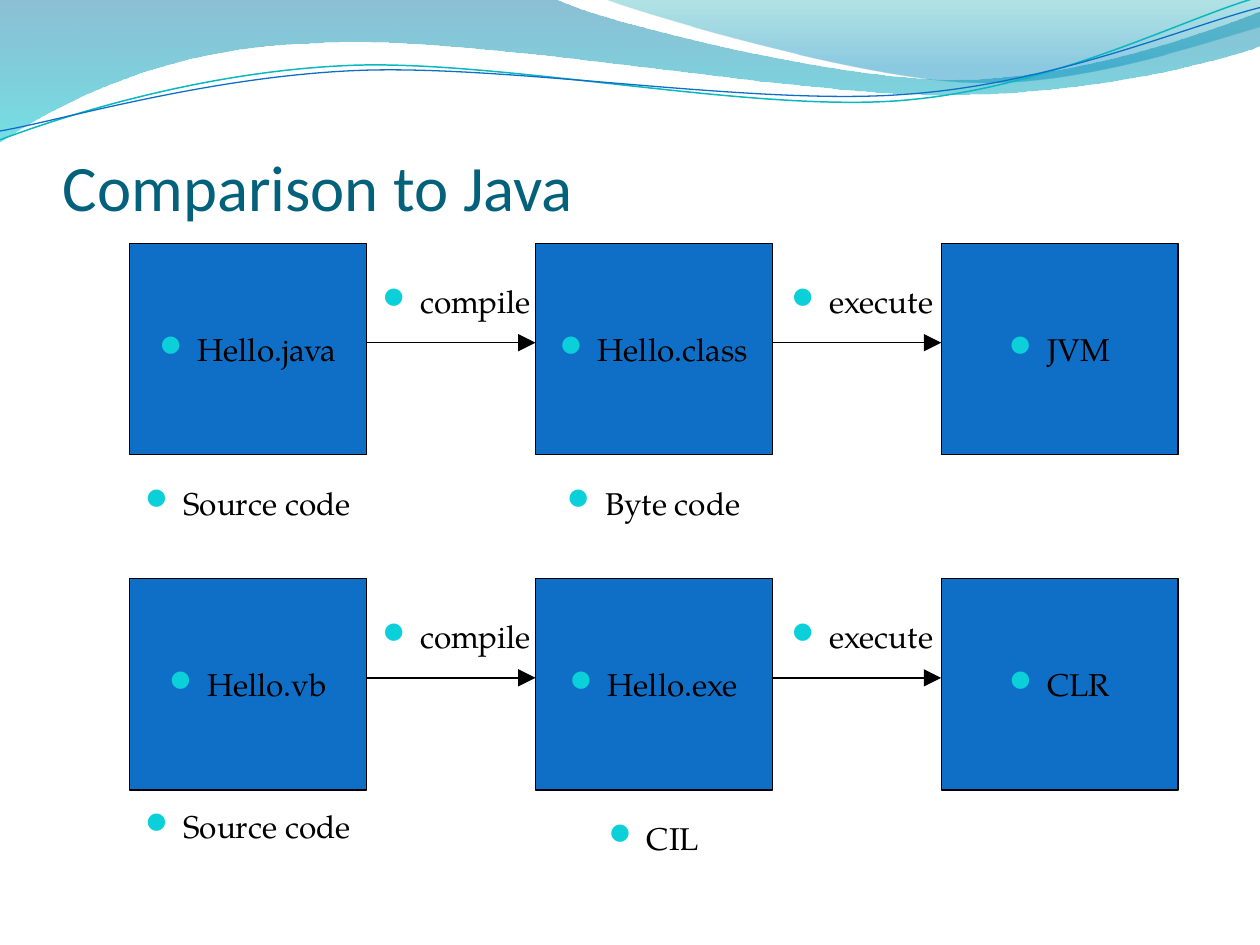
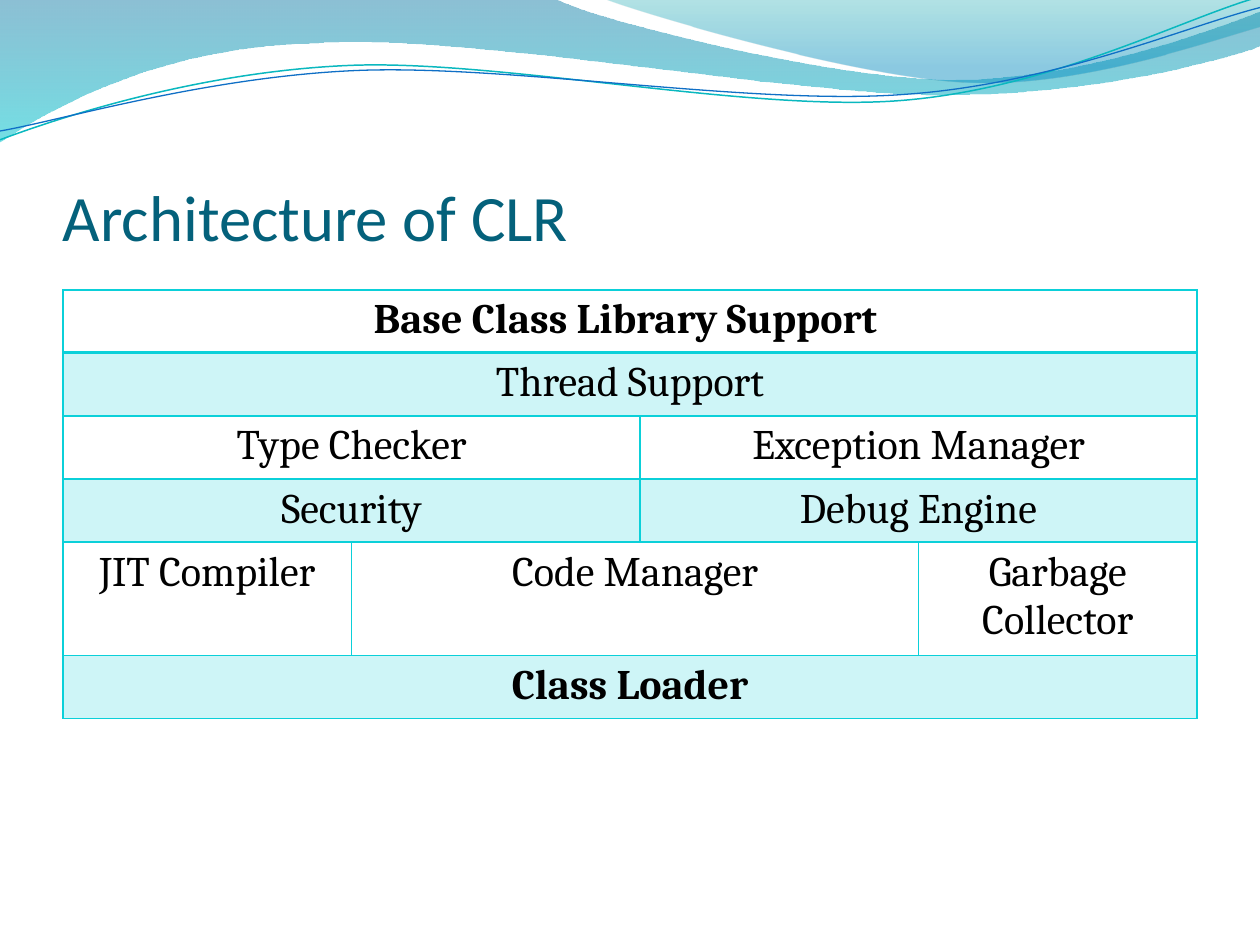
from lxml import etree
from pptx import Presentation
from pptx.dml.color import RGBColor
from pptx.enum import shapes, text
from pptx.oxml import ns
from pptx.util import Inches, Pt

# Shared colours and fonts
TITLE_TEAL = RGBColor(0x04, 0x61, 0x7B)
BLUE = RGBColor(0x0F, 0x6F, 0xC6)
CYAN = RGBColor(0x0B, 0xD0, 0xD9)
LINE_TEAL = RGBColor(0x0A, 0xB8, 0xBF)
BLACK = RGBColor(0, 0, 0)
TITLE_FONT, DIAGRAM_FONT, TABLE_FONT = "Calibri", "TeX Gyre Pagella", "Cambria"
BULLET_FONT, BULLET = "Wingdings 2", chr(0xF097)

# Waves: start point, then segments of one point (line) or three (Bezier curve)
WAVE_FILLS = [
    ([(0, 0), [(4.4, -0.01)],
      [(4.76, 0.17), (6.64, 0.63), (7.58, 0.63)],
      [(8.53, 0.63), (9.58, 0.26), (10, 0.09)],
      [(10.01, 0.36)],
      [(9.83, 0.44), (8.7, 0.76), (7.46, 0.75)],
      [(6.22, 0.75), (3.82, 0.28), (2.57, 0.34)],
      [(1.29, 0.36), (0.46, 0.83), (-0.01, 1.13)]],
     [(0, RGBColor(0x00, 0x74, 0xA1), 45), (1, RGBColor(0x00, 0xC6, 0xCF), 55)]),
    ([(4.79, -0.01),
      [(5.09, 0.11), (6.82, 0.62), (7.69, 0.65)],
      [(8.56, 0.69), (9.61, 0.32), (10, 0.21)],
      [(10, 0)]],
     [(0, RGBColor(0x00, 0xA1, 0xA9), 30), (0.8, RGBColor(0x00, 0x8B, 0xBF), 45)]),
]
WAVE_LINES = [
    ([(0, 1.11),
      [(0.48, 0.93), (1.58, 0.57), (2.77, 0.52)],
      [(3.95, 0.47), (5.93, 0.89), (7.13, 0.8)],
      [(8.33, 0.71), (9.38, 0.15), (9.98, -0.02)]], LINE_TEAL, 0.85),
    ([(0, 1.04),
      [(0.47, 0.96), (1.64, 0.61), (2.83, 0.56)],
      [(4.03, 0.51), (5.97, 0.84), (7.17, 0.75)],
      [(8.36, 0.67), (9.41, 0.21), (10, 0.06)]], BLUE, 0.75),
]

# Diagram grid
BOX_LEFT, BOX_PITCH, BOX_WIDTH, BOX_HEIGHT = 1.03, 3.22, 1.88, 1.68
FLOW_STEPS = ["compile", "execute"]

# Table rows: (text, columns spanned)
CLR_ROWS = [
    [("Base Class Library Support ", 4)],
    [("Thread Support", 4)],
    [("Type Checker", 2), ("Exception Manager", 2)],
    [("Security", 2), ("Debug Engine", 2)],
    [("JIT Compiler", 1), ("Code Manager", 2), ("Garbage Collector", 1)],
    [("Class Loader", 4)],
]
CLR_COLUMNS = [2.29, 2.29, 2.21, 2.21]


def add_xml(parent, tag, **attributes):
    return etree.SubElement(parent, ns.qn(tag), attributes)


def set_alpha(color_parent, percent):
    for color in color_parent.iter(ns.qn("a:srgbClr")):
        add_xml(color, "a:alpha", val=str(percent * 1000))


def style_text(paragraph, font, size, color, bold=False):
    paragraph.font.name = font
    paragraph.font.size = Pt(size)
    paragraph.font.color.rgb = color
    paragraph.font.bold = bold


# Wave band
def add_outline(slide, outline, close):
    """Draw the outline through its end points, then bend its curved segments."""
    (start_x, start_y), *segments = outline
    builder = slide.shapes.build_freeform(Inches(start_x), Inches(start_y))
    builder.add_line_segments([(Inches(x), Inches(y)) for x, y in
                               (segment[-1] for segment in segments)], close=close)
    wave = builder.convert_to_shape()
    wave.shadow.inherit = False
    sides = list(wave._element.iter(ns.qn("a:lnTo")))
    for side, segment in zip(sides, segments):
        if len(segment) == 3:
            curve = etree.Element(ns.qn("a:cubicBezTo"))
            for x, y in segment:
                add_xml(curve, "a:pt", x=str(Inches(x) - wave.left), y=str(Inches(y) - wave.top))
            side.getparent().replace(side, curve)
    return wave


def add_waves(slide):
    for outline, stops in WAVE_FILLS:
        wave = add_outline(slide, outline, True)
        wave.line.fill.background()
        wave.fill.gradient()
        wave.fill.gradient_angle = 270
        for stop, (position, color, alpha) in zip(wave.fill.gradient_stops, stops):
            stop.position = position
            stop.color.rgb = color
            set_alpha(stop._gs, alpha)
    for outline, color, width in WAVE_LINES:
        wave = add_outline(slide, outline, False)
        wave.fill.background()
        wave.line.color.rgb = color
        wave.line.width = Pt(width)


def add_slide(prs, title, title_top):
    slide = prs.slides.add_slide(prs.slide_layouts[6])
    add_waves(slide)
    heading = slide.shapes.add_textbox(Inches(0.5), Inches(title_top), Inches(9), Inches(1.25))
    frame = heading.text_frame
    frame.word_wrap = True
    frame.vertical_anchor = text.MSO_ANCHOR.BOTTOM
    frame.margin_left = frame.margin_right = frame.margin_bottom = 0
    frame.text = title
    style_text(frame.paragraphs[0], TITLE_FONT, 37, TITLE_TEAL)
    return slide


# Flow diagram
def write_bulleted(frame, words):
    frame.text = words
    paragraph = frame.paragraphs[0]
    paragraph.alignment = text.PP_ALIGN.CENTER
    properties = paragraph._p.get_or_add_pPr()
    properties.set("marL", str(Inches(0.3)))
    properties.set("indent", str(-Inches(0.3)))
    add_xml(add_xml(properties, "a:buClr"), "a:srgbClr", val=str(CYAN))
    add_xml(properties, "a:buSzPct", val="95000")
    add_xml(properties, "a:buFont", typeface=BULLET_FONT)
    add_xml(properties, "a:buChar", char=BULLET)
    style_text(paragraph, DIAGRAM_FONT, 18, BLACK)


def add_box(slide, left, top, words):
    box = slide.shapes.add_shape(shapes.MSO_SHAPE.RECTANGLE, Inches(left), Inches(top),
                                 Inches(BOX_WIDTH), Inches(BOX_HEIGHT))
    box.shadow.inherit = False
    box.fill.solid()
    box.fill.fore_color.rgb = BLUE
    box.line.color.rgb = BLACK
    box.line.width = Pt(0.75)
    box.text_frame.word_wrap = False
    box.text_frame.vertical_anchor = text.MSO_ANCHOR.MIDDLE
    write_bulleted(box.text_frame, words)


def add_label(slide, left, top, width, words):
    label = slide.shapes.add_textbox(Inches(left), Inches(top), Inches(width), Inches(0.43))
    label.text_frame.word_wrap = True
    write_bulleted(label.text_frame, words)


def add_arrow(slide, left, right, y):
    arrow = slide.shapes.add_connector(shapes.MSO_CONNECTOR.STRAIGHT, Inches(left), Inches(y),
                                       Inches(right), Inches(y))
    arrow.line.color.rgb = BLACK
    arrow.line.width = Pt(0.75)
    add_xml(arrow.line._get_or_add_ln(), "a:tailEnd", type="triangle", w="lg", len="lg")
    add_xml(arrow._element.spPr, "a:effectLst")


def add_flow(slide, top, stages, source_caption, output_caption):
    lefts = [BOX_LEFT + BOX_PITCH * i for i in range(len(stages))]
    for left, stage in zip(lefts, stages):
        add_box(slide, left, top, stage)
    for left, next_left, step in zip(lefts, lefts[1:], FLOW_STEPS):
        add_arrow(slide, left + BOX_WIDTH, next_left, top + 0.79)
        add_label(slide, left + BOX_WIDTH, top + 0.26, 1.43, step)
    source_words, source_top = source_caption
    add_label(slide, 0.94, source_top, 2.06, source_words)
    add_label(slide, 4.07, top + 1.86, 2.24, output_caption)


# Architecture table
def set_borders(cell, top_width, bottom_width):
    properties = cell._tc.get_or_add_tcPr()
    for side, width in (("L", 1), ("R", 1), ("T", top_width), ("B", bottom_width)):
        border = add_xml(properties, f"a:ln{side}", w=str(Pt(width)))
        add_xml(add_xml(border, "a:solidFill"), "a:srgbClr", val=str(CYAN))


def style_cell(cell, row):
    set_borders(cell, 2 if row == 1 else 1, 2 if row == 0 else 1)
    if row % 2:
        cell.fill.solid()
        cell.fill.fore_color.rgb = CYAN
        set_alpha(cell._tc.tcPr.find(ns.qn("a:solidFill")), 20)
    else:
        cell.fill.background()


def add_architecture(slide):
    table_frame = slide.shapes.add_table(len(CLR_ROWS), len(CLR_COLUMNS), Inches(0.5),
                                         Inches(2.3), Inches(9), Inches(3.4))
    table = table_frame.table
    table.first_row = table.horz_banding = False
    for column, width in zip(table.columns, CLR_COLUMNS):
        column.width = Inches(width)
    for row, parts in enumerate(CLR_ROWS):
        table.rows[row].height = Inches(0.41)
        for column in range(len(CLR_COLUMNS)):
            style_cell(table.cell(row, column), row)
        column = 0
        for words, span in parts:
            cell = table.cell(row, column)
            if span > 1:
                cell.merge(table.cell(row, column + span - 1))
            cell.text = words
            paragraph = cell.text_frame.paragraphs[0]
            paragraph.alignment = text.PP_ALIGN.CENTER
            style_text(paragraph, TABLE_FONT, 24, BLACK, row in (0, len(CLR_ROWS) - 1))
            column += span
    # Rows grow with their text, so the frame is taller than their minimum heights
    table_frame.height = Inches(3.4)


def main():
    prs = Presentation()
    prs.slide_width, prs.slide_height = Inches(10), Inches(7.5)

    comparison = add_slide(prs, "Comparison to Java", 0.53)
    add_flow(comparison, 1.93, ["Hello.java", "Hello.class", "JVM"],
             ("Source code", 3.79), "Byte code")
    add_flow(comparison, 4.59, ["Hello.vb", "Hello.exe", "CLR"],
             ("Source code", 6.36), "CIL")

    architecture = add_slide(prs, "Architecture of CLR", 0.77)
    add_architecture(architecture)

    prs.save("out.pptx")


if __name__ == "__main__":
    main()
